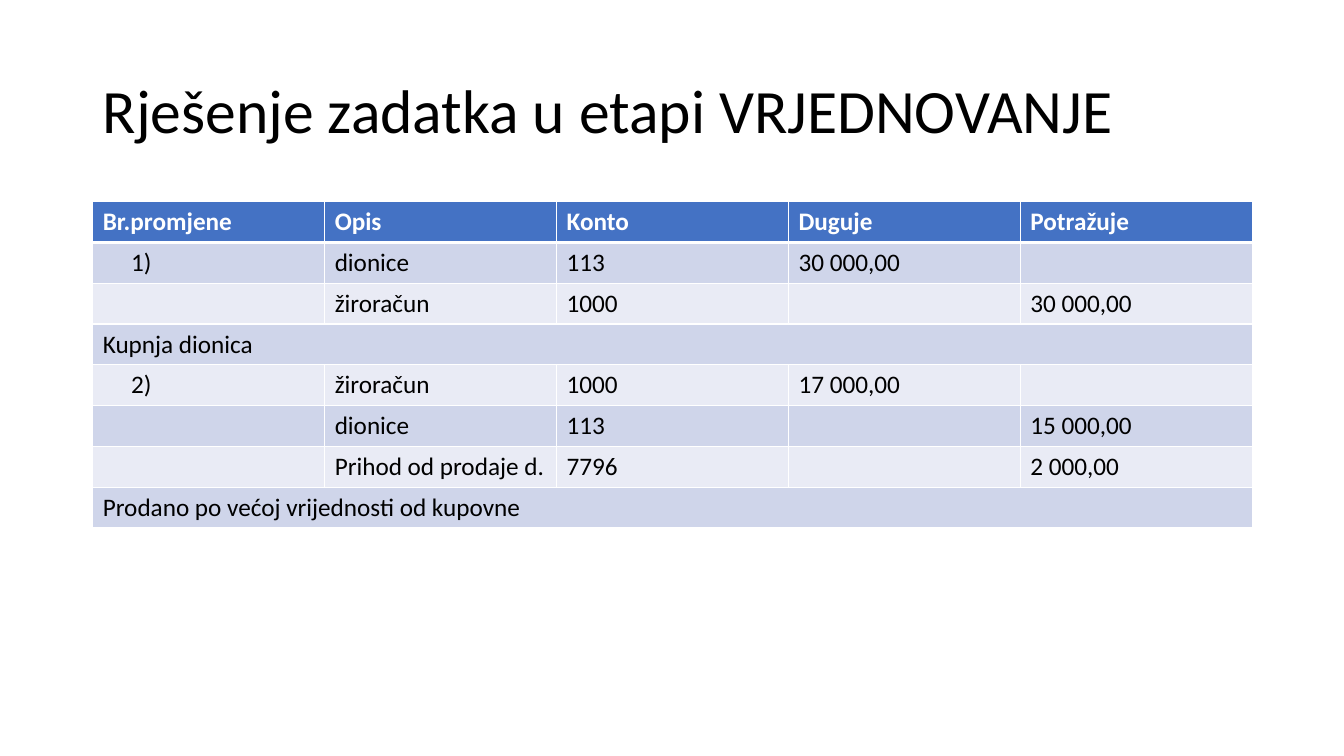
from dataclasses import dataclass

import pptx
import pptx.dml.color
import pptx.enum.text
import pptx.oxml
import pptx.oxml.ns
import pptx.util
from pptx.util import Inches

FONT = "Calibri"
COLORS = {
    "header": "4472C4",
    "odd": "CFD5EA",
    "even": "E9EBF5",
    "border": "FFFFFF",
    "header_text": "FFFFFF",
    "text": "000000",
}
LEFT, WIDTH = 0.92, 11.5
TABLE_TOP, ROW_HEIGHT = 2, 0.405
NUMBER_INDENT = 0.28


@dataclass(frozen=True)
class Entry:
    """One journal row; a merged entry holds a note across all columns."""
    texts: tuple[str, ...]
    merged: bool = False


HEADINGS = Entry(("Br.promjene", "Opis", "Konto", "Duguje", "Potražuje"))
JOURNAL = [
    HEADINGS,
    Entry(("1)", "dionice", "113", "30 000,00", "")),
    Entry(("", "žiroračun", "1000", "", "30 000,00")),
    Entry(("Kupnja dionica", "", "", "", ""), merged=True),
    Entry(("2)", "žiroračun", "1000", "17 000,00", "")),
    Entry(("", "dionice", "113", "", "15 000,00")),
    Entry(("", "Prihod od prodaje d.", "7796", "", "2 000,00")),
    Entry(("Prodano po većoj vrijednosti od kupovne", "", "", "", ""), merged=True),
]


def rgb(color: str) -> pptx.dml.color.RGBColor:
    return pptx.dml.color.RGBColor.from_string(COLORS[color])


def add_run(paragraph, text: str, size: int, color: str, bold: bool = False) -> None:
    run = paragraph.add_run()
    run.text = text
    run.font.name = FONT
    run.font.size = pptx.util.Pt(size)
    run.font.bold = bold
    run.font.color.rgb = rgb(color)


def add_border(cell, side: str, points: int) -> None:
    namespace = pptx.oxml.ns.nsdecls("a")
    cell._tc.get_or_add_tcPr().append(pptx.oxml.parse_xml(
        f'<a:ln{side} {namespace} w="{pptx.util.Pt(points)}"><a:solidFill>'
        f'<a:srgbClr val="{COLORS["border"]}"/></a:solidFill></a:ln{side}>'
    ))


def add_title(slide, text: str) -> None:
    title = slide.shapes.add_textbox(
        Inches(LEFT), Inches(0.4), Inches(WIDTH), Inches(1.45))
    frame = title.text_frame
    frame.word_wrap = True
    frame.vertical_anchor = pptx.enum.text.MSO_ANCHOR.MIDDLE
    frame.paragraphs[0].line_spacing = 0.9
    add_run(frame.paragraphs[0], text, 44, "text")


def fill_cell(cell, text: str, row: int) -> None:
    is_header = row == 0
    thickness = {"L": 1, "R": 1, "T": 3 if row == 1 else 1, "B": 3 if is_header else 1}
    for side, points in thickness.items():
        add_border(cell, side, points)
    cell.fill.solid()
    cell.fill.fore_color.rgb = rgb(
        "header" if is_header else "odd" if row % 2 else "even")
    if text:
        paragraph = cell.text_frame.paragraphs[0]
        if text.endswith(")"):
            paragraph._p.get_or_add_pPr().set("marL", str(Inches(NUMBER_INDENT)))
        add_run(paragraph, text, 18, "header_text" if is_header else "text", is_header)


def add_journal(slide, entries: list[Entry]) -> None:
    columns = len(HEADINGS.texts)
    journal = slide.shapes.add_table(
        len(entries), columns, Inches(LEFT), Inches(TABLE_TOP),
        Inches(WIDTH), Inches(ROW_HEIGHT * len(entries))).table
    for row, entry in enumerate(entries):
        for column, text in enumerate(entry.texts):
            fill_cell(journal.cell(row, column), text, row)
        if entry.merged:
            journal.cell(row, 0).merge(journal.cell(row, columns - 1))


def main() -> None:
    presentation = pptx.Presentation()
    presentation.slide_width = Inches(13.33)
    presentation.slide_height = Inches(7.5)
    slide = presentation.slides.add_slide(presentation.slide_layouts[6])
    add_title(slide, "Rješenje zadatka u etapi VRJEDNOVANJE")
    add_journal(slide, JOURNAL)
    presentation.save("out.pptx")


if __name__ == "__main__":
    main()
